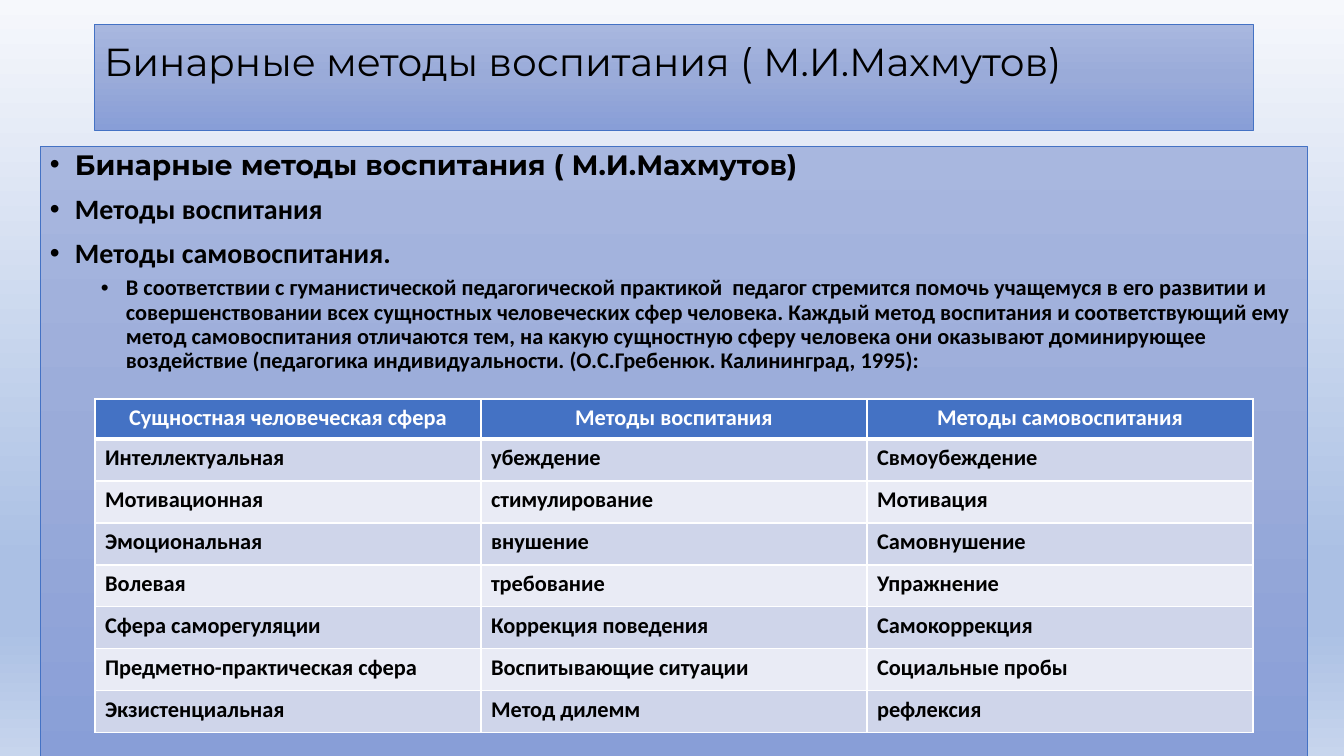
from dataclasses import dataclass

from lxml.etree import SubElement
from pptx import Presentation
from pptx.dml.color import RGBColor
from pptx.enum.shapes import MSO_SHAPE
from pptx.enum.text import MSO_ANCHOR, MSO_AUTO_SIZE, PP_ALIGN
from pptx.oxml.ns import qn
from pptx.util import Emu, Pt

EMU_PER_PX = 914400 / 100.8


@dataclass(frozen=True)
class Theme:
    background: tuple = ((0, "F6F8FC"), (74, "ABC0E4"), (83, "ABC0E4"), (100, "C7D5ED"))
    panel: tuple = ((0, "A8B7DF"), (50, "9AABD9"), (100, "889ED7"))
    accent: str = "4472C4"
    bands: tuple = ("CFD5EA", "E9EBF5")
    ink: str = "000000"
    white: str = "FFFFFF"
    heading_font: str = "Montserrat"
    text_font: str = "Calibri"
    title_size: float = 27.9
    point_size: float = 20
    detail_size: float = 16


@dataclass(frozen=True)
class Frame:
    left: int
    top: int
    width: int
    height: int


@dataclass(frozen=True)
class Point:
    text: str
    font: str
    size: float
    margin: int = 25
    before: int = 10
    level: int = 0


THEME = Theme()
TITLE = "Бинарные методы воспитания ( М.И.Махмутов)"
TITLE_FRAME = Frame(94, 24, 1159, 106)
BODY_FRAME = Frame(40, 146, 1267, 619)
TABLE_FRAME = Frame(95, 399, 1158, 334)
HEADER_HEIGHT = 40
BULLET_HANG = 25
TITLE_LIFT = 31
POINTS = (
    Point(TITLE, THEME.heading_font, THEME.point_size),
    Point("Методы воспитания", THEME.text_font, THEME.point_size),
    Point("Методы самовоспитания.", THEME.text_font, THEME.point_size),
    Point(
        "В соответствии с гуманистической педагогической практикой  педагог стремится "
        "помочь учащемуся в его развитии и совершенствовании всех сущностных "
        "человеческих сфер человека. Каждый метод воспитания и соответствующий ему "
        "метод самовоспитания отличаются тем, на какую сущностную сферу человека они "
        "оказывают доминирующее воздействие (педагогика индивидуальности. "
        "(О.С.Гребенюк. Калининград, 1995):",
        THEME.text_font, THEME.detail_size, margin=76, before=5, level=1,
    ),
)
METHODS = (
    ("Сущностная человеческая сфера", "Методы воспитания", "Методы самовоспитания"),
    ("Интеллектуальная", "убеждение", "Свмоубеждение"),
    ("Мотивационная", "стимулирование", "Мотивация"),
    ("Эмоциональная", "внушение", "Самовнушение"),
    ("Волевая", "требование", "Упражнение"),
    ("Сфера саморегуляции", "Коррекция поведения", "Самокоррекция"),
    ("Предметно-практическая сфера", "Воспитывающие ситуации", "Социальные пробы"),
    ("Экзистенциальная", "Метод дилемм", "рефлексия"),
)


def px(length: int) -> Emu:
    return Emu(round(length * EMU_PER_PX))


def place(box, frame: Frame) -> None:
    box.left, box.top = px(frame.left), px(frame.top)
    box.width, box.height = px(frame.width), px(frame.height)


def paint_gradient(fill, root, stops: tuple) -> None:
    fill.gradient()
    fill.gradient_angle = 270
    stop_list = next(root.iter(qn("a:gsLst")))
    for stop in list(stop_list):
        stop_list.remove(stop)
    for percent, color in stops:
        stop = SubElement(stop_list, qn("a:gs"), pos=str(percent * 1000))
        SubElement(stop, qn("a:srgbClr"), val=color)


def style_panel(box) -> None:
    paint_gradient(box.fill, box.element, THEME.panel)
    box.line.color.rgb = RGBColor.from_string(THEME.accent)
    box.line.width = Pt(0.5)
    box.shadow.inherit = False
    box.text_frame.word_wrap = True
    box.text_frame.auto_size = MSO_AUTO_SIZE.NONE


def write(para, text: str, font: str, size: float, color: str, bold: bool,
          align: PP_ALIGN = PP_ALIGN.LEFT) -> None:
    para.text = text
    para.alignment = align
    for span in para.runs:
        span.font.name = font
        span.font.size = Pt(size)
        span.font.bold = bold
        span.font.color.rgb = RGBColor.from_string(color)


def add_title(page) -> None:
    box = page.shapes.title
    place(box, TITLE_FRAME)
    style_panel(box)
    box.text_frame.vertical_anchor = MSO_ANCHOR.MIDDLE
    box.text_frame.margin_bottom = px(TITLE_LIFT)
    para = box.text_frame.paragraphs[0]
    write(para, TITLE, THEME.heading_font, THEME.title_size, THEME.ink, False)
    para.line_spacing = 0.9


def add_points(page) -> None:
    box = page.shapes.add_shape(MSO_SHAPE.RECTANGLE, 0, 0, 0, 0)
    place(box, BODY_FRAME)
    style_panel(box)
    box.text_frame.vertical_anchor = MSO_ANCHOR.TOP
    for index, point in enumerate(POINTS):
        para = box.text_frame.add_paragraph() if index else box.text_frame.paragraphs[0]
        write(para, point.text, point.font, point.size, THEME.ink, True)
        para.level = point.level
        para.line_spacing = 0.9
        para.space_before = Pt(point.before)
        properties = para._p.get_or_add_pPr()
        properties.set("marL", str(px(point.margin)))
        properties.set("indent", str(-px(BULLET_HANG)))
        SubElement(properties, qn("a:buFont"), typeface="Arial")
        SubElement(properties, qn("a:buChar"), char="•")


def add_borders(cell, top: int, bottom: int) -> None:
    properties = cell._tc.get_or_add_tcPr()
    for side, width in (("L", 1), ("R", 1), ("T", top), ("B", bottom)):
        line = SubElement(properties, qn(f"a:ln{side}"), w=str(Pt(width)))
        SubElement(SubElement(line, qn("a:solidFill")), qn("a:srgbClr"), val=THEME.white)


def add_methods(page) -> None:
    columns = len(METHODS[0])
    frame = page.shapes.add_table(len(METHODS), columns, 0, 0, 0, 0)
    place(frame, TABLE_FRAME)
    table = frame.table
    for column in table.columns:
        column.width = px(TABLE_FRAME.width // columns)
    row_height = (TABLE_FRAME.height - HEADER_HEIGHT) // (len(METHODS) - 1)
    for row, texts in enumerate(METHODS):
        header = row == 0
        table.rows[row].height = px(HEADER_HEIGHT if header else row_height)
        for column, text in enumerate(texts):
            cell = table.cell(row, column)
            add_borders(cell, top=3 if row == 1 else 1, bottom=3 if header else 1)
            cell.fill.solid()
            color = THEME.accent if header else THEME.bands[(row - 1) % 2]
            cell.fill.fore_color.rgb = RGBColor.from_string(color)
            write(cell.text_frame.paragraphs[0], text, THEME.text_font, THEME.detail_size,
                  THEME.white if header else THEME.ink, True,
                  PP_ALIGN.CENTER if header else PP_ALIGN.LEFT)


def main() -> None:
    deck = Presentation()
    deck.slide_width, deck.slide_height = px(1344), px(756)
    page = deck.slides.add_slide(deck.slide_layouts[5])
    paint_gradient(page.background.fill, page.element, THEME.background)
    add_title(page)
    add_points(page)
    add_methods(page)
    deck.save("out.pptx")


if __name__ == "__main__":
    main()
